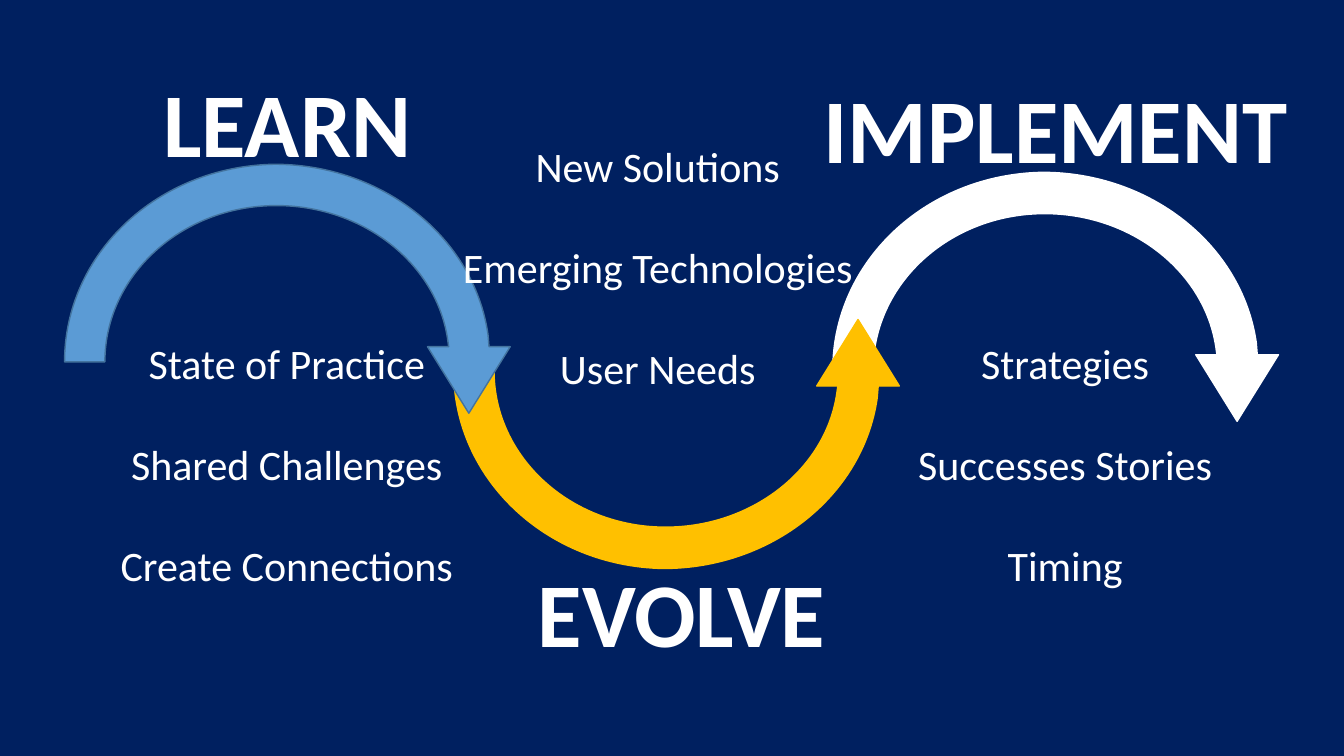
from dataclasses import dataclass

from lxml import etree
from pptx import Presentation
from pptx.dml.color import RGBColor
from pptx.enum import text as txt
from pptx.oxml import ns
from pptx.util import Inches, Pt


@dataclass(frozen=True)
class Theme:
    font: str = "Calibri"
    heading_size: int = 65
    item_size: int = 30
    item_gap: int = 36
    navy: str = "002060"
    white: str = "FFFFFF"
    gold: str = "FFC000"
    blue: str = "5B9BD5"
    blue_edge: str = "43739E"


THEME = Theme()
ARROW_HEIGHT = 2.47
HEADING_SIZE = (4.92, 1.19)
LIST_SIZE = (5.21, 2.63)

# Arched arrow within its box: one point is a line, three points are a curve
ARROW_START = (2.08, 0)
ARROW_SEGMENTS = [
    [(3.15, 0), (4.06, 0.72), (4.2, 1.69)],
    [(4.21, 1.81)],
    [(4.42, 1.81)],
    [(4.01, 2.47)],
    [(3.6, 1.81)],
    [(3.81, 1.81)],
    [(3.8, 1.74)],
    [(3.69, 0.98), (2.95, 0.4), (2.08, 0.41)],
    [(1.15, 0.42), (0.4, 1.11), (0.4, 1.96)],
    [(0, 1.96)],
    [(0, 0.89), (0.92, 0.02), (2.08, 0)],
]


def bend_curves(arrow):
    """Join the three lines of each curved segment into one cubic curve."""
    lines = iter(list(arrow.element.iter(ns.qn("a:lnTo"))))
    for segment in ARROW_SEGMENTS:
        group = [next(lines) for _ in segment]
        if len(group) == 3:
            curve = etree.Element(ns.qn("a:cubicBezTo"))
            group[0].addprevious(curve)
            for line in group:
                curve.append(line[0])
                line.getparent().remove(line)


def add_arrow(page, left, top, fill, edge, upward=False):
    """Arched arrow; upward turns the arch into a bowl."""
    outline = [ARROW_START] + [point for segment in ARROW_SEGMENTS for point in segment]
    points = [(Inches(left + x), Inches(top + (ARROW_HEIGHT - y if upward else y)))
              for x, y in outline]
    builder = page.shapes.build_freeform(*points[0])
    builder.add_line_segments(points[1:], close=True)
    arrow = builder.convert_to_shape()
    bend_curves(arrow)
    arrow.shadow.inherit = False
    arrow.fill.solid()
    arrow.fill.fore_color.rgb = RGBColor.from_string(fill)
    arrow.line.color.rgb = RGBColor.from_string(edge)
    arrow.line.width = Pt(1)


def add_centred_text(page, left, top, box_size, lines, size, bold=False):
    box = page.shapes.add_textbox(*map(Inches, (left, top, *box_size)))
    frame = box.text_frame
    frame.word_wrap = True
    for index, line in enumerate(lines):
        para = frame.add_paragraph() if index else frame.paragraphs[0]
        para.alignment = txt.PP_ALIGN.CENTER
        if index:
            para.space_before = Pt(THEME.item_gap)
        span = para.add_run()
        span.text = line
        span.font.name = THEME.font
        span.font.size = Pt(size)
        span.font.bold = bold
        span.font.color.rgb = RGBColor.from_string(THEME.white)


def add_heading(page, left, top, heading):
    add_centred_text(page, left, top, HEADING_SIZE, [heading],
                     THEME.heading_size, bold=True)


def add_topics(page, left, top, topics):
    add_centred_text(page, left, top, LIST_SIZE, topics, THEME.item_size)


def build_cycle_page(deck):
    page = deck.slides.add_slide(deck.slide_layouts[6])
    page.background.fill.solid()
    page.background.fill.fore_color.rgb = RGBColor.from_string(THEME.navy)

    # Wave of arrows, from back to front
    add_arrow(page, 8.26, 1.71, THEME.white, THEME.white)
    add_arrow(page, 4.5, 3.17, THEME.gold, THEME.gold, upward=True)
    add_arrow(page, 0.64, 1.63, THEME.blue, THEME.blue_edge)

    # Stage names
    add_heading(page, 8.01, 0.67, "IMPLEMENT")
    add_heading(page, 0.39, 0.61, "LEARN")
    add_heading(page, 4.3, 5.47, "EVOLVE")

    # Topics of each stage
    add_topics(page, 0.24, 3.3,
               ["State of Practice", "Shared Challenges", "Create Connections"])
    add_topics(page, 3.92, 1.35,
               ["New Solutions", "Emerging Technologies", "User Needs"])
    add_topics(page, 7.96, 3.3, ["Strategies", "Successes Stories", "Timing"])


def main():
    deck = Presentation()
    deck.slide_width, deck.slide_height = Inches(13.33), Inches(7.5)
    build_cycle_page(deck)
    deck.save("out.pptx")


if __name__ == "__main__":
    main()
